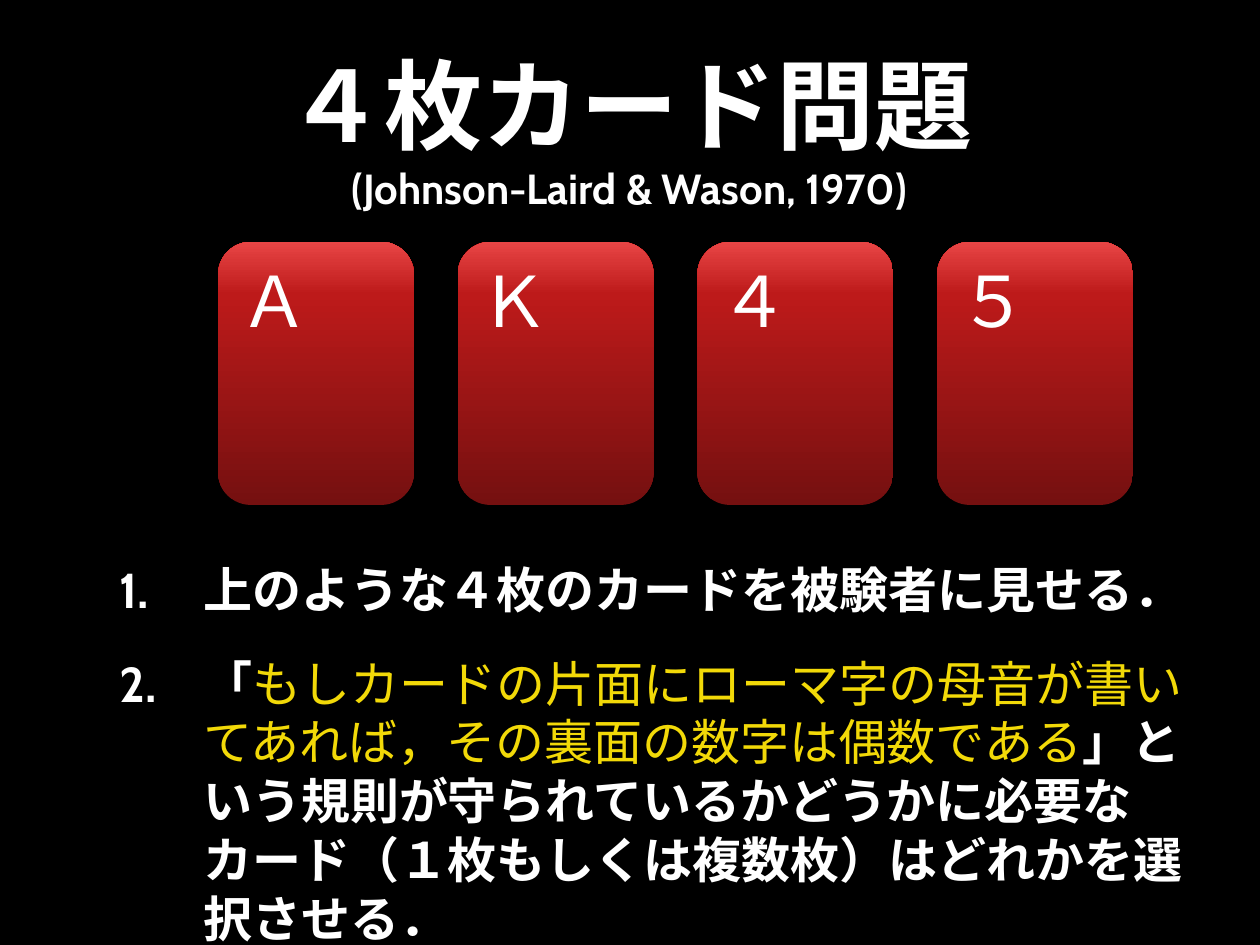
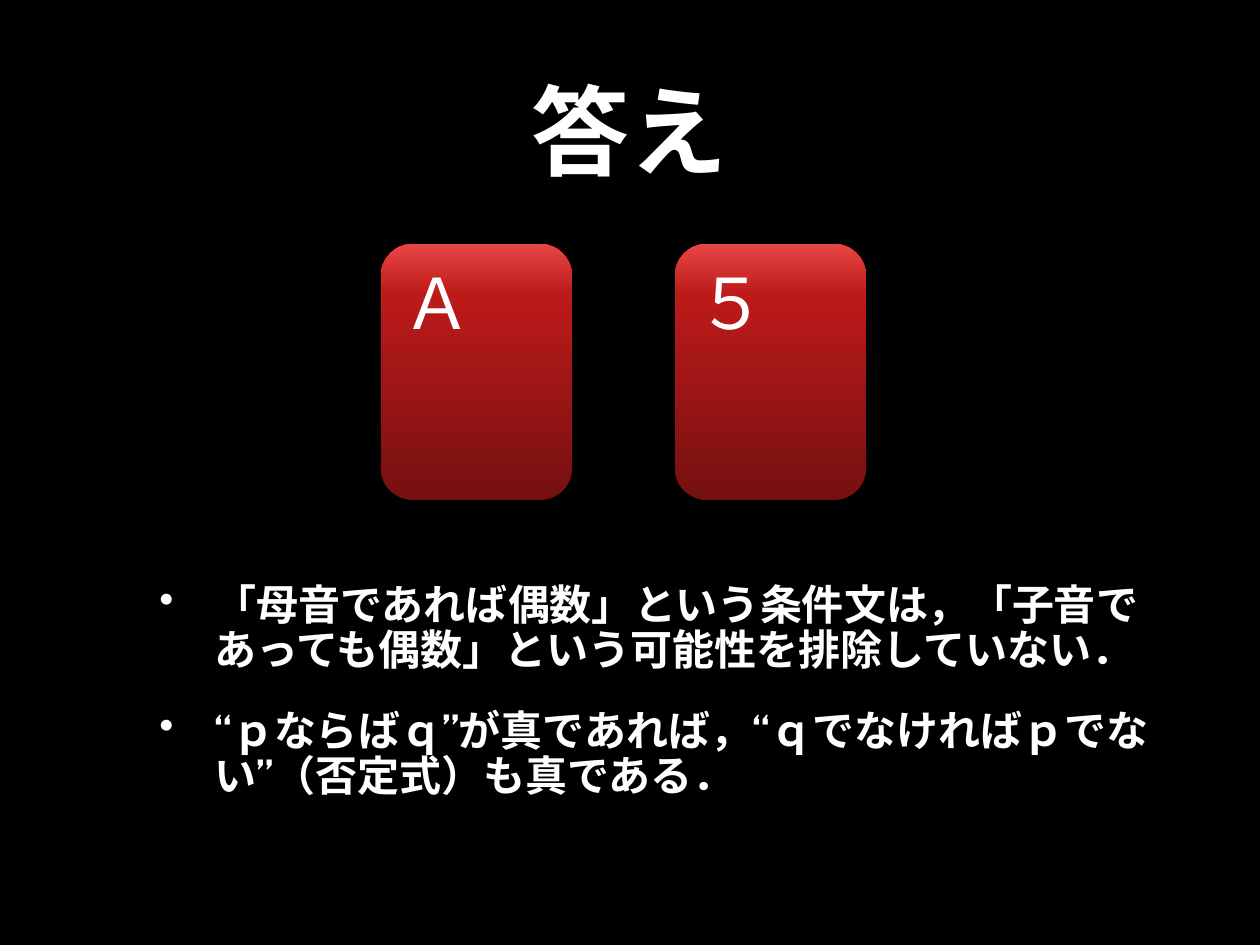
from lxml import etree
from pptx import Presentation
from pptx.dml.color import RGBColor
from pptx.enum.lang import MSO_LANGUAGE_ID as LANG
from pptx.enum.shapes import MSO_SHAPE as SHAPE
from pptx.enum.text import MSO_ANCHOR as ANCHOR, PP_ALIGN as ALIGN
from pptx.oxml.ns import qn
from pptx.util import Pt

EMU_PER_PX = 914400 / 126
FONT = "Cabin"
COLORS = {
    "back": "000000",
    "text": "FFFFFF",
    "rule": "F2D908",
    "card_low": "751010",
    "card_mid": "BD1A1A",
    "card_top": "E84545",
}
CARD_STOPS = [(0, "card_low"), (80, "card_mid"), (100, "card_top")]
TITLE = {"size": Pt(56), "bold": True}
SUBTITLE = {"size": Pt(24), "bold": True}
CARD = {"size": Pt(40), "bold": False}
STEP = {"size": Pt(28), "bold": True}
RULE = {"size": Pt(28), "bold": False, "color": "rule"}
NOTE = {"size": Pt(24), "bold": True}
NUMBER = ("a:buAutoNum", {"type": "arabicPeriod"})
DOT = ("a:buChar", {"char": "•"})


def px(n):
    return round(n * EMU_PER_PX)


def rgb(name):
    return RGBColor.from_string(COLORS[name])


class Deck:
    def __init__(self, width, height):
        self.prs = Presentation()
        self.prs.slide_width, self.prs.slide_height = px(width), px(height)
        self.s = None

    def slide(self):
        self.s = self.prs.slides.add_slide(self.prs.slide_layouts[6])
        fill = self.s.background.fill
        fill.solid()
        fill.fore_color.rgb = rgb("back")

    def run(self, p, text, style):
        r = p.add_run()
        r.text = text
        values = {"name": FONT, "language_id": LANG.JAPANESE, **style}
        color = values.pop("color", "text")
        for key, value in values.items():
            setattr(r.font, key, value)
        r.font.color.rgb = rgb(color)
        etree.SubElement(r.font._element, qn("a:ea"), typeface=FONT)

    def box(self, x, y, w, h, anchor):
        tf = self.s.shapes.add_textbox(px(x), px(y), px(w), px(h)).text_frame
        tf.word_wrap = True
        tf.vertical_anchor = anchor
        return tf

    def title(self, text, subtitle=None):
        p = self.box(107, 15, 1045, 228, ANCHOR.MIDDLE).paragraphs[0]
        p.alignment = ALIGN.CENTER
        self.run(p, text, TITLE)
        if subtitle:
            p.add_line_break()
            self.run(p, subtitle, SUBTITLE)

    def items(self, x, y, w, h, paragraphs, bullet, indent, spacing=1.0):
        tf = self.box(x, y, w, h, ANCHOR.TOP)
        tag, attrs = bullet
        for i, runs in enumerate(paragraphs):
            p = tf.add_paragraph() if i else tf.paragraphs[0]
            p.line_spacing = spacing
            p.space_before = Pt(20 if i else 0)
            # Hanging indent and bullet
            pPr = p._p.get_or_add_pPr()
            pPr.set("marL", str(px(indent)))
            pPr.set("indent", str(-px(indent)))
            etree.SubElement(pPr, qn(tag), attrs)
            for text, style in runs:
                self.run(p, text, style)

    def card(self, x, y, w, h, face):
        sp = self.s.shapes.add_shape(SHAPE.ROUNDED_RECTANGLE, px(x), px(y), px(w), px(h))
        sp.adjustments[0] = 0.167
        sp.shadow.inherit = False
        sp.line.fill.background()
        # Three-stop gradient, dark at the bottom
        sp.fill.gradient()
        sp.fill.gradient_angle = 90
        stops = sp._element.spPr.find(qn("a:gradFill")).find(qn("a:gsLst"))
        for old in list(stops):
            stops.remove(old)
        for pos, name in CARD_STOPS:
            gs = etree.SubElement(stops, qn("a:gs"), pos=str(pos * 1000))
            etree.SubElement(gs, qn("a:srgbClr"), val=COLORS[name])
        # Card face
        tf = sp.text_frame
        tf.word_wrap = False
        tf.vertical_anchor = ANCHOR.TOP
        p = tf.paragraphs[0]
        p.alignment = ALIGN.LEFT
        self.run(p, face, CARD)

    def cards(self, faces, left, right, y, w, h):
        pitch = (right - left - w) / (len(faces) - 1)
        for i, face in enumerate(faces):
            self.card(left + i * pitch, y, w, h, face)


def main():
    d = Deck(1260, 945)

    # The four-card problem
    d.slide()
    d.title("４枚カード問題", "(Johnson-Laird & Wason, 1970)")
    d.items(107, 553, 1090, 363, [
        [("上のような４枚のカードを被験者に見せる．", STEP)],
        [("「", STEP),
         ("もしカードの片面にローマ字の母音が書いてあれば，その裏面の数字は偶数である", RULE),
         ("」という規則が守られているかどうかに必要なカード（１枚もしくは複数枚）は"
          "どれかを選択させる．", STEP)],
    ], NUMBER, 84)
    d.cards("ＡＫ４５", 218, 1133, 242, 196, 263)

    # The answer
    d.slide()
    d.title("答え")
    d.items(147, 578, 1050, 297, [
        [("「母音であれば偶数」という条件文は，「子音であっても偶数」という可能性を"
          "排除していない．", NOTE)],
        [("“ｐならばｑ”が真であれば，“ｑでなければｐでない”（否定式）も真である．", NOTE)],
    ], DOT, 55, 0.9)
    d.cards("Ａ５", 381, 866, 244, 191, 256)

    d.prs.save("out.pptx")


if __name__ == "__main__":
    main()
